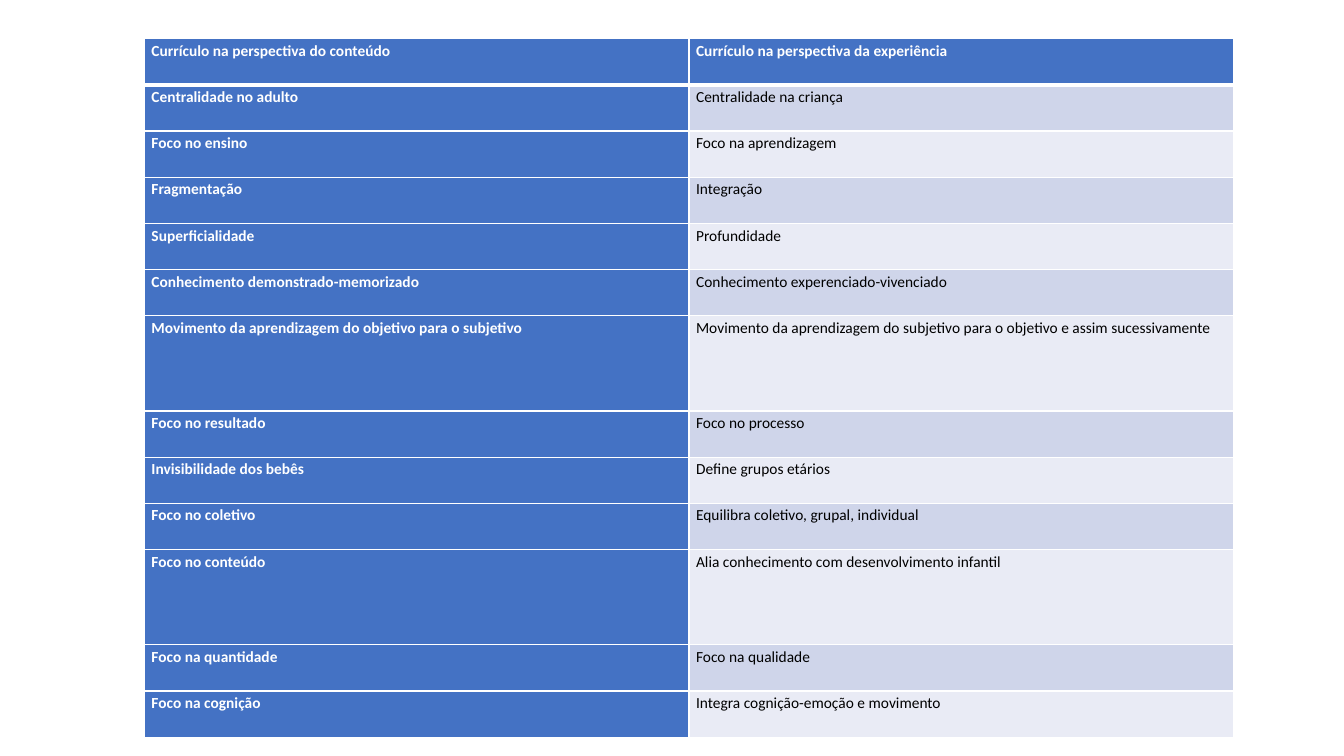
"""Builds a slide with a table comparing two views of the curriculum."""
from dataclasses import dataclass

import pptx
import pptx.dml.color
import pptx.enum.text
import pptx.oxml
import pptx.oxml.ns
import pptx.table
import pptx.util

Pt = pptx.util.Pt
LEFT, TOP, COLUMN_WIDTH = 103.2, 27.6, 389
SINGLE, DOUBLE = 33, 68
BLUE, WHITE, BLACK = "4472C4", "FFFFFF", "000000"
BANDS = ("CFD5EA", "E9EBF5")


@dataclass
class Comparison:
    content: str
    experience: str
    height: float = SINGLE


ROWS = [
    Comparison("Currículo na perspectiva do conteúdo", "Currículo na perspectiva da experiência"),
    Comparison("Centralidade no adulto", "Centralidade na criança"),
    Comparison("Foco no ensino", "Foco na aprendizagem"),
    Comparison("Fragmentação", "Integração"),
    Comparison("Superficialidade", "Profundidade"),
    Comparison("Conhecimento demonstrado-memorizado", "Conhecimento experenciado-vivenciado"),
    Comparison("Movimento da aprendizagem do objetivo para o subjetivo",
               "Movimento da aprendizagem do subjetivo para o objetivo e assim sucessivamente", DOUBLE),
    Comparison("Foco no resultado", "Foco no processo"),
    Comparison("Invisibilidade dos bebês", "Define grupos etários"),
    Comparison("Foco no coletivo", "Equilibra coletivo, grupal, individual"),
    Comparison("Foco no conteúdo", "Alia conhecimento com desenvolvimento infantil", DOUBLE),
    Comparison("Foco na quantidade", "Foco na qualidade"),
    Comparison("Foco na cognição", "Integra cognição-emoção e movimento"),
]


def rgb(value: str) -> pptx.dml.color.RGBColor:
    return pptx.dml.color.RGBColor.from_string(value)


def add_border(cell: pptx.table._Cell, side: str, width: float) -> None:
    cell._tc.get_or_add_tcPr().append(pptx.oxml.parse_xml(
        f'<a:ln{side} {pptx.oxml.ns.nsdecls("a")} w="{Pt(width)}">'
        f'<a:solidFill><a:srgbClr val="{WHITE}"/></a:solidFill></a:ln{side}>'))


def format_cell(cell: pptx.table._Cell, text: str, row: int, column: int) -> None:
    heading = row == 0 or column == 0
    for side in "LRTB":
        under_header = (row, side) in ((0, "B"), (1, "T"))
        add_border(cell, side, 3 if under_header else 1)
    cell.fill.solid()
    cell.fill.fore_color.rgb = rgb(BLUE if heading else BANDS[(row - 1) % 2])
    cell.margin_left = cell.margin_right = Pt(5)
    cell.margin_top = cell.margin_bottom = Pt(0)
    cell.text_frame.text = text
    p = cell.text_frame.paragraphs[0]
    p.alignment = pptx.enum.text.PP_ALIGN.JUSTIFY
    p.line_spacing = 1.15
    font = p.runs[0].font
    font.name, font.size, font.bold = "Calibri", Pt(11), heading
    font.color.rgb = rgb(WHITE if heading else BLACK)


def main() -> None:
    prs = pptx.Presentation()
    prs.slide_width, prs.slide_height = Pt(960), Pt(540)
    s = prs.slides.add_slide(prs.slide_layouts[6])
    height = sum(comparison.height for comparison in ROWS)
    table = s.shapes.add_table(len(ROWS), 2, Pt(LEFT), Pt(TOP),
                               Pt(2 * COLUMN_WIDTH), Pt(height)).table
    table.first_col = True
    for column in table.columns:
        column.width = Pt(COLUMN_WIDTH)
    for i, comparison in enumerate(ROWS):
        table.rows[i].height = Pt(comparison.height)
        for j, text in enumerate((comparison.content, comparison.experience)):
            format_cell(table.cell(i, j), text, i, j)
    prs.save("out.pptx")


if __name__ == "__main__":
    main()
